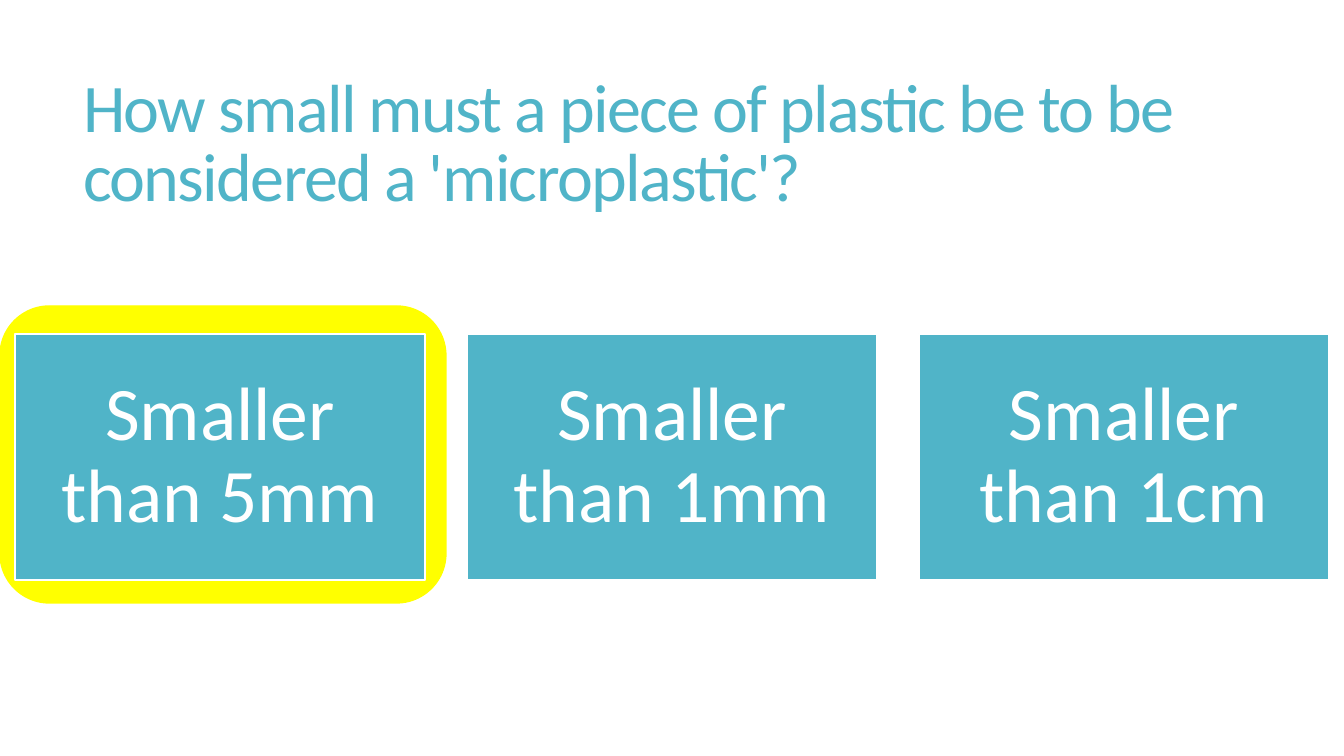
import pptx
import pptx.util
import pptx.dml.color
import pptx.enum.shapes
import pptx.enum.text

QUESTION = "How small must a piece of plastic be to be considered a 'microplastic'?"
ANSWERS = ["Smaller than 5mm", "Smaller than 1mm", "Smaller than 1cm"]

TEAL, WHITE, YELLOW = "50B4C8", "FFFFFF", "FFFF00"
FONT = "Calibri"
SLIDE_W, SLIDE_H = 1344, 756
TITLE_BOX = (73, 55, 1187, 182)
HIGHLIGHT_BOX = (0, 306, 446, 297)
CARD_LEFT, CARD_TOP, CARD_W, CARD_H, CARD_GAP = 15, 334, 410, 246, 42
CARD_INSET = 23

SHAPE = pptx.enum.shapes.MSO_SHAPE
ALIGN = pptx.enum.text.PP_ALIGN


def px(n):
    return pptx.util.Emu(round(n * 914400 / 100.8))


def rgb(color):
    return pptx.dml.color.RGBColor.from_string(color)


def add_box(shapes, kind, box, fill, line):
    sp = shapes.add_shape(kind, *map(px, box))
    sp.shadow.inherit = False
    sp.fill.solid()
    sp.fill.fore_color.rgb = rgb(fill)
    sp.line.color.rgb = rgb(line)
    sp.line.width = pptx.util.Pt(1)
    return sp


def write(sp, text, *, size, color, align=ALIGN.LEFT, leading=1, tracking=0, inset=None):
    """Tracking is in points; inset is in px for all four sides."""
    tf = sp.text_frame
    tf.word_wrap = True
    tf.auto_size = pptx.enum.text.MSO_AUTO_SIZE.NONE
    tf.vertical_anchor = pptx.enum.text.MSO_ANCHOR.MIDDLE
    if inset is not None:
        tf.margin_left = tf.margin_top = tf.margin_right = tf.margin_bottom = px(inset)
    p = tf.paragraphs[0]
    p.alignment = align
    p.line_spacing = leading
    r = p.add_run()
    r.text = text
    r.font.name = FONT
    r.font.size = pptx.util.Pt(size)
    r.font.color.rgb = rgb(color)
    if tracking:
        r.font._element.set("spc", str(round(tracking * 100)))


def main():
    prs = pptx.Presentation()
    prs.slide_width, prs.slide_height = px(SLIDE_W), px(SLIDE_H)
    slide = prs.slides.add_slide(prs.slide_layouts[5])

    title = slide.shapes.title
    title.left, title.top, title.width, title.height = map(px, TITLE_BOX)
    write(title, QUESTION, size=48.6, color=TEAL, leading=0.85, tracking=-1.2)

    add_box(slide.shapes, SHAPE.ROUNDED_RECTANGLE, HIGHLIGHT_BOX, YELLOW, YELLOW)

    cards = slide.shapes.add_group_shape()
    for i, answer in enumerate(ANSWERS):
        left = CARD_LEFT + i * (CARD_W + CARD_GAP)
        card = add_box(cards.shapes, SHAPE.RECTANGLE,
                       (left, CARD_TOP, CARD_W, CARD_H), TEAL, WHITE)
        write(card, answer, size=54, color=WHITE, align=ALIGN.CENTER,
              leading=0.9, inset=CARD_INSET)

    prs.save("out.pptx")


if __name__ == "__main__":
    main()
